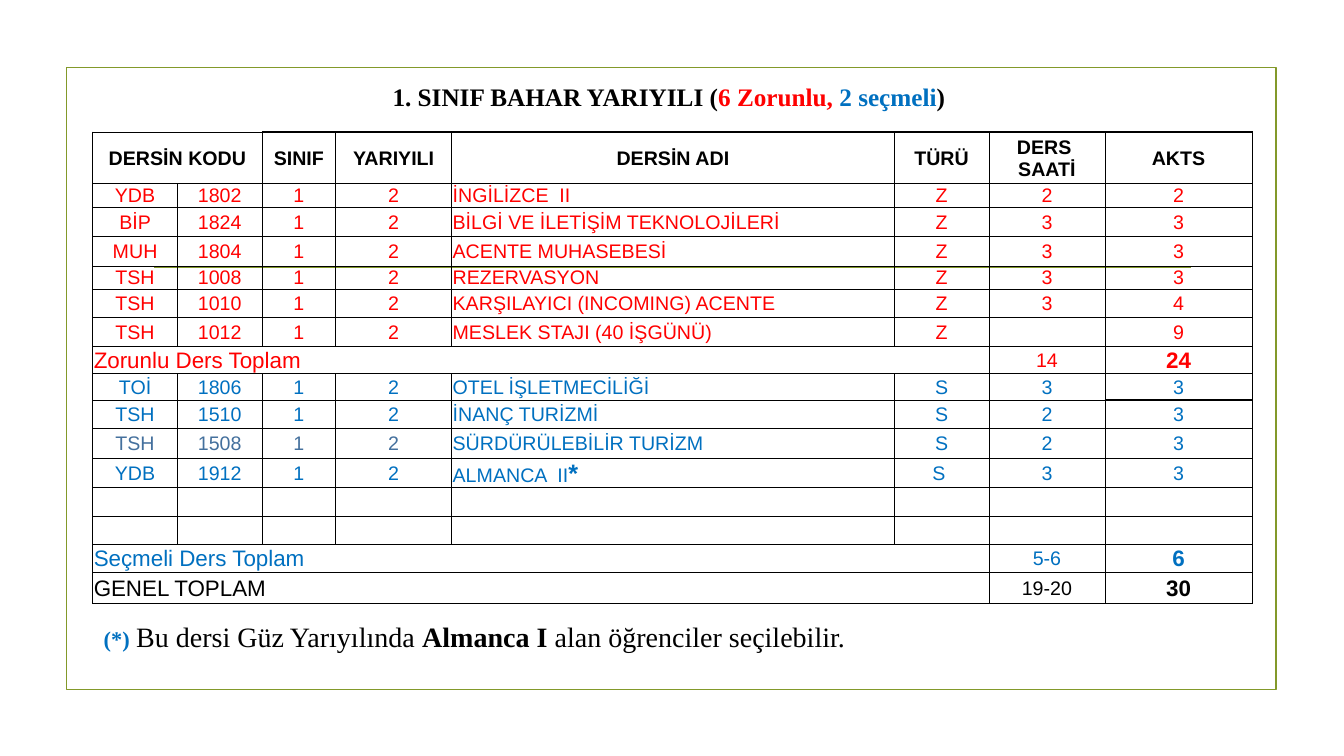
from lxml import etree
from pptx import Presentation
from pptx import util as u
from pptx.dml.color import RGBColor
from pptx.enum import shapes, text
from pptx.oxml.ns import qn

EMU_PER_PX = 9144
OLIVE = RGBColor(0x83, 0x99, 0x2A)
BLACK = RGBColor(0, 0, 0)
RED = RGBColor(0xFF, 0, 0)
BLUE = RGBColor(0, 0x70, 0xC0)
SLATE = RGBColor(0x44, 0x70, 0x9D)
SANS, SERIF = "Arial", "Times New Roman"
LEFT, CENTER = text.PP_ALIGN.LEFT, text.PP_ALIGN.CENTER

COL_WIDTHS = [84, 84, 73, 115, 439, 94, 115, 146]
ROW_HEIGHTS = [51, 24, 29, 29, 23, 28, 29, 27, 26, 28, 30, 29, 28, 28, 28, 31]
NAME_COL, HOURS_COL, AKTS_COL = 4, 6, 7
HEADERS = ["DERSİN KODU", "", "SINIF", "YARIYILI", "DERSİN ADI", "TÜRÜ",
           "DERS \nSAATİ", "AKTS"]
REQUIRED = [
    ("YDB", "1802", "İNGİLİZCE  II", "Z", "2", "2"),
    ("BİP", "1824", "BİLGİ VE İLETİŞİM TEKNOLOJİLERİ", "Z", "3", "3"),
    ("MUH", "1804", "ACENTE MUHASEBESİ", "Z", "3", "3"),
    ("TSH", "1008", "REZERVASYON", "Z", "3", "3"),
    ("TSH", "1010", "KARŞILAYICI (INCOMING) ACENTE", "Z", "3", "4"),
    ("TSH", "1012", "MESLEK STAJI (40 İŞGÜNÜ)", "Z", "", "9"),
]
ELECTIVE = [
    ("TOİ", "1806", "OTEL İŞLETMECİLİĞİ", "S", "3", "3"),
    ("TSH", "1510", "İNANÇ TURİZMİ", "S", "2", "3"),
    ("TSH", "1508", "SÜRDÜRÜLEBİLİR TURİZM", "S", "2", "3"),
    ("YDB", "1912", "ALMANCA  II", "S ", "3", "3"),
]
TOTALS = [
    (7, "Zorunlu Ders Toplam", "14", "24", RED),
    (14, "Seçmeli Ders Toplam", "5-6", "6", BLUE),
    (15, "GENEL TOPLAM", "19-20", "30", BLACK),
]
FIRST_REQUIRED, FIRST_ELECTIVE = 1, 8
SLATE_ROW, STARRED_ROW = 10, 11


def px(n):
    return u.Emu(n * EMU_PER_PX)


def add_run(p, content, size, color, bold=False, font=SANS):
    r = p.add_run()
    r.text = content
    r.font.name = font
    r.font.size = u.Pt(size)
    r.font.bold = bold
    r.font.color.rgb = color


def add_frame(s):
    sp = s.shapes.add_shape(shapes.MSO_SHAPE.RECTANGLE, px(66), px(67), px(1200), px(617))
    sp.shadow.inherit = False
    sp.fill.background()
    sp.line.color.rgb = OLIVE
    sp.line.width = u.Pt(1.25)


def add_rule(s):
    line = s.shapes.add_connector(shapes.MSO_CONNECTOR.STRAIGHT,
                                  px(153), px(265), px(1181), px(265))
    line.line.color.rgb = OLIVE
    line.line.width = u.Pt(1.25)
    etree.SubElement(line._element.spPr, qn("a:effectLst"))


def add_text(s, left, top, width, height, align, runs):
    tf = s.shapes.add_textbox(px(left), px(top), px(width), px(height)).text_frame
    tf.word_wrap = True
    tf.auto_size = text.MSO_AUTO_SIZE.SHAPE_TO_FIT_TEXT
    p = tf.paragraphs[0]
    p.alignment = align
    for run in runs:
        add_run(p, *run, font=SERIF)


def border_widths(row, col):
    return {
        "L": 0.5,
        "R": 1 if col == AKTS_COL else 0.5,
        "T": 1 if (row == 0 and col > 1)
        or (row == FIRST_ELECTIVE + 1 and col == AKTS_COL) else 0.5,
        "B": 1 if row == FIRST_ELECTIVE and col == AKTS_COL else 0.5,
    }


def style_cell(cell, row, col):
    cell.margin_left = cell.margin_top = cell.margin_right = px(1)
    cell.margin_bottom = 0
    cell.vertical_anchor = text.MSO_ANCHOR.MIDDLE
    tc_pr = cell._tc.get_or_add_tcPr()
    for side, width in border_widths(row, col).items():
        ln = etree.SubElement(tc_pr, qn(f"a:ln{side}"), w=str(u.Pt(width)))
        fill = etree.SubElement(ln, qn("a:solidFill"))
        etree.SubElement(fill, qn("a:srgbClr"), val=str(BLACK))
    cell.fill.background()


def write_cell(cell, content, color, size=14, bold=False, align=CENTER):
    tf = cell.text_frame
    for i, part in enumerate(content.split("\n")):
        p = tf.add_paragraph() if i else tf.paragraphs[0]
        p.alignment = align
        if part:
            add_run(p, part, size, color, bold)


def write_course(table, row, course, color):
    code, number, *rest = course
    for col, content in enumerate([code, number, "1", "2", *rest]):
        shade = SLATE if row == SLATE_ROW and col < NAME_COL else color
        write_cell(table.cell(row, col), content, shade,
                   align=LEFT if col == NAME_COL else CENTER)


def write_total(table, row, label, hours, akts, color):
    table.cell(row, 0).merge(table.cell(row, HOURS_COL - 1))
    write_cell(table.cell(row, 0), label, color, 16, align=LEFT)
    write_cell(table.cell(row, HOURS_COL), hours, color)
    write_cell(table.cell(row, AKTS_COL), akts, color, 16, True)


def add_course_table(s):
    table = s.shapes.add_table(len(ROW_HEIGHTS), len(COL_WIDTHS), px(92), px(131),
                               px(sum(COL_WIDTHS)), px(sum(ROW_HEIGHTS))).table
    table.first_row = table.horz_banding = False
    for column, width in zip(table.columns, COL_WIDTHS):
        column.width = px(width)
    for row, height in enumerate(ROW_HEIGHTS):
        table.rows[row].height = px(height)
        for col in range(len(COL_WIDTHS)):
            style_cell(table.cell(row, col), row, col)

    table.cell(0, 0).merge(table.cell(0, 1))
    for col, header in enumerate(HEADERS):
        if header:
            write_cell(table.cell(0, col), header, BLACK, bold=True)
    for first, courses, color in ((FIRST_REQUIRED, REQUIRED, RED),
                                  (FIRST_ELECTIVE, ELECTIVE, BLUE)):
        for row, course in enumerate(courses, first):
            write_course(table, row, course, color)
    starred = table.cell(STARRED_ROW, NAME_COL).text_frame.paragraphs[0]
    add_run(starred, "*", 18, BLUE, True)
    for total in TOTALS:
        write_total(table, *total)

    for cell in table.iter_cells():
        p = cell.text_frame.paragraphs[0]
        if not p.runs:
            etree.SubElement(p._p, qn("a:endParaRPr"), sz="1400")


def main():
    prs = Presentation()
    prs.slide_width, prs.slide_height = px(1333), px(750)
    s = prs.slides.add_slide(prs.slide_layouts[6])
    add_frame(s)
    add_rule(s)
    add_course_table(s)
    add_text(s, 265, 76, 803, 40, CENTER, [
        ("1. SINIF BAHAR YARIYILI (", 18, BLACK, True),
        ("6 Zorunlu, ", 18, RED, True),
        ("2 seçmeli", 18, BLUE, True),
        (") ", 18, BLACK, True),
    ])
    add_text(s, 93, 610, 1165, 44, LEFT, [
        ("(*)", 16, BLUE, True),
        (" ", 18, BLACK),
        ("Bu dersi Güz Yarıyılında ", 20, BLACK),
        ("Almanca I", 20, BLACK, True),
        (" alan öğrenciler seçilebilir.", 20, BLACK),
    ])
    prs.save("out.pptx")


if __name__ == "__main__":
    main()
